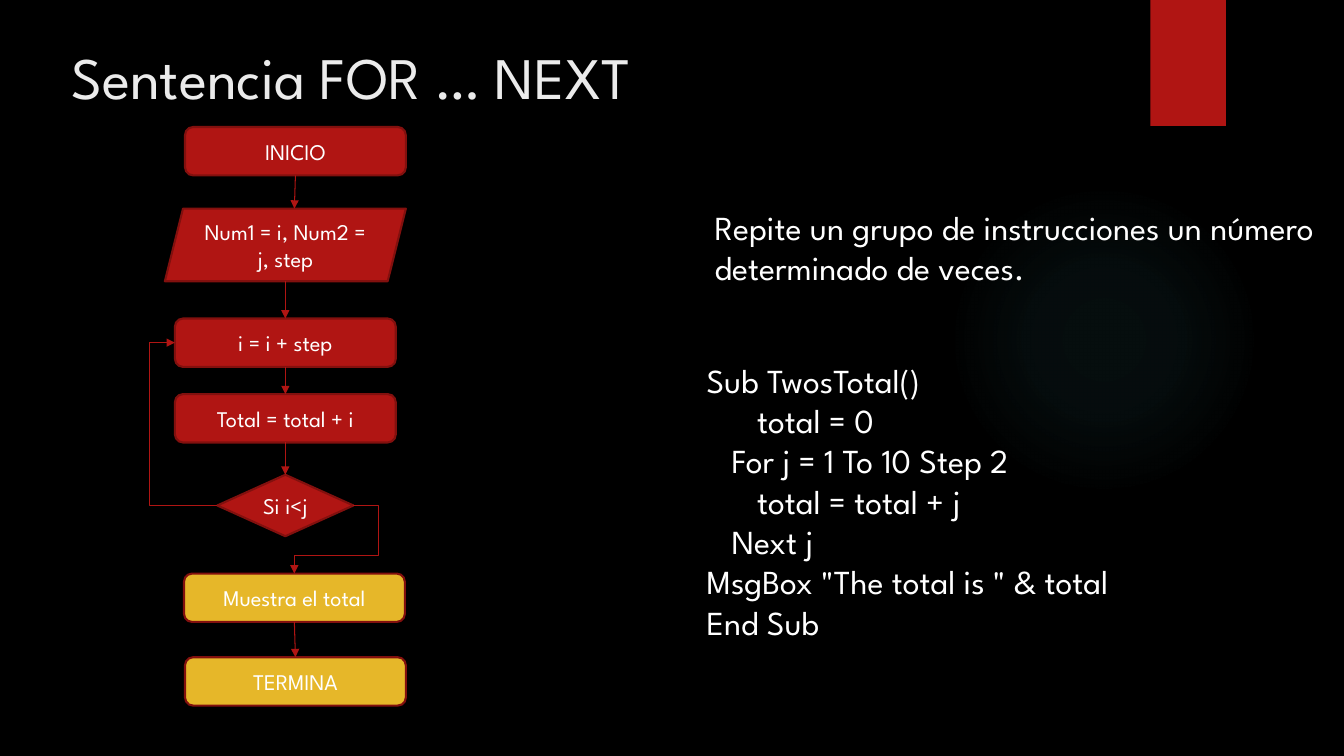
import pptx
import pptx.util
import pptx.dml.color
import pptx.enum.shapes
import pptx.enum.text
import pptx.oxml
import pptx.oxml.ns

Inches = pptx.util.Inches
SHAPE = pptx.enum.shapes.MSO_SHAPE
CONNECTOR = pptx.enum.shapes.MSO_CONNECTOR
ALIGN = pptx.enum.text.PP_ALIGN
ANCHOR = pptx.enum.text.MSO_ANCHOR

TITLE = "Sentencia FOR … NEXT"
INTRO = ["Repite un grupo de instrucciones un número determinado de veces."]
CODE = [
    "Sub TwosTotal()",
    "\ttotal = 0",
    "   For j = 1 To 10 Step 2",
    "\ttotal = total + j",
    "   Next j",
    'MsgBox "The total is " & total',
    "End Sub",
]
FONT = "League Spartan"
COLORS = {
    "background": "000000",
    "red": "B01513",
    "outline": "82100E",
    "gold": "E6B729",
    "title": "EBEBEB",
    "text": "FFFFFF",
    "glow": "50B9C1",
}
GLOW_STOPS = [(0, 7), (36, 6), (69, 0)]  # position %, opacity %

# name: (text, shape, fill, centre x, top, width, height)
BOX = SHAPE.FLOWCHART_ALTERNATE_PROCESS
STEPS = {
    "start": ("INICIO", BOX, "red", 2.93, 1.26, 2.19, 0.48),
    "input": ("Num1 = i, Num2 = j, step", SHAPE.PARALLELOGRAM, "red", 2.83, 2.07, 2.39, 0.72),
    "count": ("i = i + step", BOX, "red", 2.83, 3.16, 2.19, 0.48),
    "add": ("Total = total + i", BOX, "red", 2.83, 3.91, 2.19, 0.48),
    "test": ("Si i<j", SHAPE.DIAMOND, "red", 2.83, 4.71, 1.35, 0.61),
    "show": ("Muestra el total", BOX, "gold", 2.92, 5.69, 2.19, 0.48),
    "end": ("TERMINA", BOX, "gold", 2.93, 6.52, 2.19, 0.48),
}
STRAIGHT_ARROWS = [
    ("start", "input"), ("input", "count"), ("count", "add"),
    ("add", "test"), ("show", "end"),
]
SLANT = 0.25  # parallelogram slant as a share of its height
DETOUR = 0.25  # distance the bent arrows keep from the boxes


def rgb(name):
    return pptx.dml.color.RGBColor.from_string(COLORS[name])


def write_text(shape, lines, size, color="text", align=ALIGN.LEFT, anchor=ANCHOR.TOP, tab=None):
    frame = shape.text_frame
    frame.word_wrap = True
    frame.auto_size = pptx.enum.text.MSO_AUTO_SIZE.NONE
    frame.vertical_anchor = anchor
    for index, line in enumerate(lines):
        paragraph = frame.add_paragraph() if index else frame.paragraphs[0]
        paragraph.alignment = align
        if tab:
            properties = paragraph._p.get_or_add_pPr()
            tabs = properties.makeelement(pptx.oxml.ns.qn("a:tabLst"), {})
            stop = tabs.makeelement(
                pptx.oxml.ns.qn("a:tab"), {"pos": str(Inches(tab)), "algn": "l"})
            tabs.append(stop)
            properties.append(tabs)
        run = paragraph.add_run()
        run.text = line
        run.font.name = FONT
        run.font.size = pptx.util.Pt(size)
        run.font.color.rgb = rgb(color)


def add_filled(slide, kind, box, fill, outline=None):
    shape = slide.shapes.add_shape(kind, *map(Inches, box))
    shape.shadow.inherit = False
    shape.fill.solid()
    shape.fill.fore_color.rgb = rgb(fill)
    if outline:
        shape.line.color.rgb = rgb(outline)
        shape.line.width = pptx.util.Pt(1.5)
    else:
        shape.line.fill.background()
    return shape


def add_glow(slide, box):
    shape = add_filled(slide, SHAPE.OVAL, box, "glow")
    stops = "".join(
        f'<a:gs pos="{position * 1000}"><a:srgbClr val="{COLORS["glow"]}">'
        f'<a:alpha val="{opacity * 1000}"/></a:srgbClr></a:gs>'
        for position, opacity in GLOW_STOPS)
    gradient = pptx.oxml.parse_xml(
        f'<a:gradFill {pptx.oxml.ns.nsdecls("a")}><a:gsLst>{stops}</a:gsLst>'
        '<a:path path="circle"><a:fillToRect l="50000" t="50000" r="50000" b="50000"/>'
        '</a:path></a:gradFill>')
    solid = shape._element.spPr.find(pptx.oxml.ns.qn("a:solidFill"))
    solid.getparent().replace(solid, gradient)


def add_arrow(slide, start, end, bends=()):
    """Draw an arrow; bends are the adjustments of an elbow, as shares of its size."""
    kind = CONNECTOR.ELBOW if bends else CONNECTOR.STRAIGHT
    arrow = slide.shapes.add_connector(kind, *map(Inches, start + end))
    arrow.line.color.rgb = rgb("red")
    arrow.line.width = pptx.util.Pt(0.75)
    namespace = pptx.oxml.ns.nsdecls("a")
    properties = arrow._element.spPr
    arrow.line._get_or_add_ln().append(
        pptx.oxml.parse_xml(f'<a:tailEnd {namespace} type="triangle"/>'))
    properties.append(pptx.oxml.parse_xml(f"<a:effectLst {namespace}/>"))
    if bends:
        guides = "".join(
            f'<a:gd name="adj{number}" fmla="val {round(share * 100000)}"/>'
            for number, share in enumerate(bends, 1))
        geometry = properties.find(pptx.oxml.ns.qn("a:prstGeom"))
        properties.replace(geometry, pptx.oxml.parse_xml(
            f'<a:prstGeom {namespace} prst="bentConnector{len(bends) + 2}">'
            f"<a:avLst>{guides}</a:avLst></a:prstGeom>"))


def site(name, side):
    """Return the point where an arrow meets one side of a step."""
    _, kind, _, center, top, width, height = STEPS[name]
    shift = SLANT * height / 2 if kind == SHAPE.PARALLELOGRAM else 0
    return {
        "top": (center + shift, top),
        "bottom": (center, top + height),
        "left": (center - width / 2, top + height / 2),
        "right": (center + width / 2, top + height / 2),
    }[side]


def add_flowchart(slide):
    for text, kind, fill, center, top, width, height in STEPS.values():
        box = (center - width / 2, top, width, height)
        shape = add_filled(slide, kind, box, fill, outline="outline")
        write_text(shape, [text], 16, align=ALIGN.CENTER, anchor=ANCHOR.MIDDLE)
    for source, target in STRAIGHT_ARROWS:
        add_arrow(slide, site(source, "bottom"), site(target, "top"))

    start, end = site("test", "left"), site("count", "left")
    add_arrow(slide, start, end, bends=[1 + DETOUR / (start[0] - end[0])])
    start, end = site("test", "right"), site("show", "top")
    add_arrow(slide, start, end, bends=[-DETOUR / (start[0] - end[0]), 0.73])


def main():
    presentation = pptx.Presentation()
    presentation.slide_width = Inches(13.33)
    presentation.slide_height = Inches(7.5)
    slide = presentation.slides.add_slide(presentation.slide_layouts.get_by_name("Title Only"))
    slide.background.fill.solid()
    slide.background.fill.fore_color.rgb = rgb("background")

    add_glow(slide, (9.41, 1.83, 3.08, 3.08))
    add_filled(slide, SHAPE.RECTANGLE, (11.41, 0, 0.75, 1.25), "red")

    title = slide.shapes.title
    title.left, title.top, title.width, title.height = map(Inches, (0.61, 0.35, 10.29, 1.53))
    write_text(title, [TITLE], 42, color="title")

    code = slide.shapes.add_textbox(*map(Inches, (6.91, 3.52, 6.22, 2.93)))
    write_text(code, CODE, 24, align=ALIGN.JUSTIFY, tab=0.5)
    intro = slide.shapes.add_textbox(*map(Inches, (6.99, 2, 6.14, 0.91)))
    write_text(intro, INTRO, 24, align=ALIGN.JUSTIFY)

    add_flowchart(slide)
    presentation.save("out.pptx")


if __name__ == "__main__":
    main()
